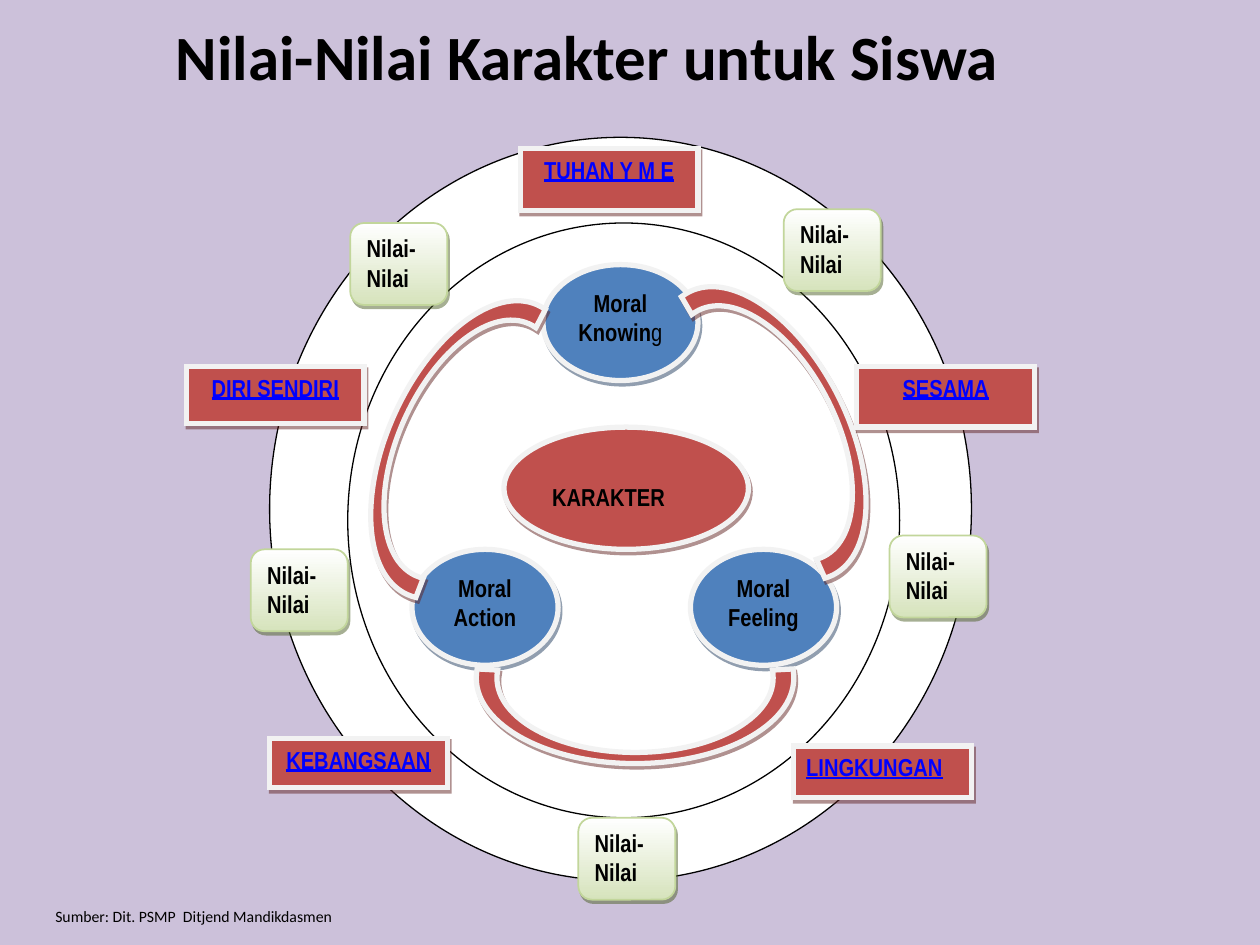
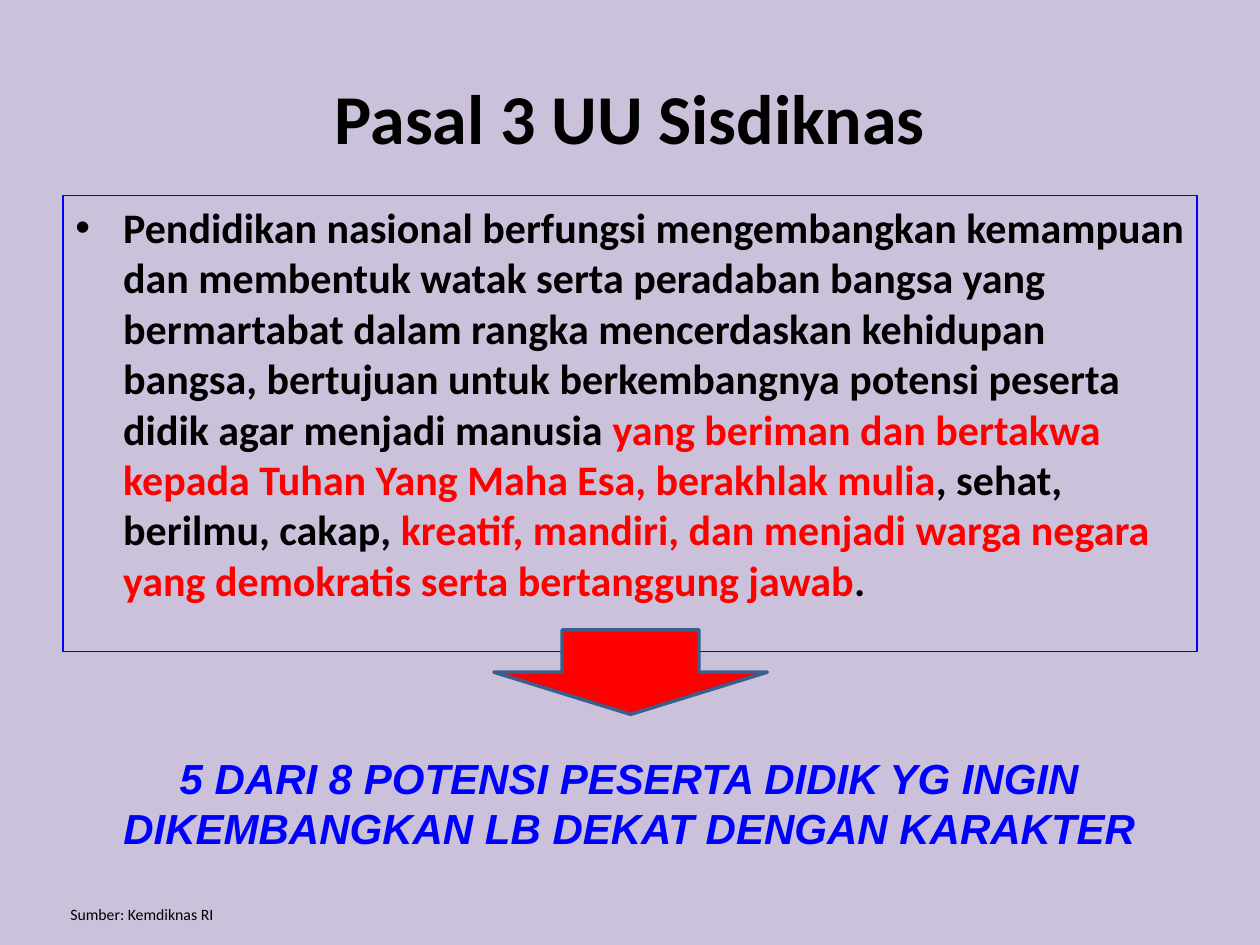
from math import cos, radians, sin, tan

from lxml import etree
from pptx import Presentation
from pptx.dml.color import RGBColor
from pptx.enum import shapes, text as text_enum
from pptx.oxml import ns
from pptx.util import Inches, Pt

LAVENDER = RGBColor(0xCC, 0xC1, 0xDA)
WHITE = RGBColor(0xFF, 0xFF, 0xFF)
BLACK = RGBColor(0, 0, 0)
RED = RGBColor(0xFF, 0, 0)
BLUE = RGBColor(0, 0, 0xFF)
BRICK = RGBColor(0xC0, 0x50, 0x4D)
BRICK_SHADOW = RGBColor(0x62, 0x24, 0x23)
STEEL = RGBColor(0x4F, 0x81, 0xBD)
STEEL_SHADOW = RGBColor(0x24, 0x3F, 0x60)
STEEL_LINE = RGBColor(0x3A, 0x5F, 0x8C)
PALE_GREY = RGBColor(0xF2, 0xF2, 0xF2)
GREEN = RGBColor(0xD6, 0xE3, 0xBC)
GREEN_LINE = RGBColor(0xC2, 0xD6, 0x9B)
GREEN_SHADOW = RGBColor(0x4E, 0x61, 0x28)

SHAPE = shapes.MSO_SHAPE
LEFT, CENTER = text_enum.PP_ALIGN.LEFT, text_enum.PP_ALIGN.CENTER
TOP, MIDDLE = text_enum.MSO_ANCHOR.TOP, text_enum.MSO_ANCHOR.MIDDLE
LABEL = dict(size=14, font="Arial Narrow", bold=True, space_after=10)

ARC_WIDTH, ARC_HEIGHT = 2.52, 1.36
ARC_INNER_RATIO = 0.87
ARC_ANGLES = (-6, 0, 90, 180, 186)  # slightly more than a half ellipse


def write(shape, content, size, font="Calibri", color=BLACK, bold=False, italic=False,
          underline=False, align=LEFT, anchor=TOP, wrap=True, side_margin=0.1,
          top_margin=0.05, space_before=0, space_after=0):
    """Write one paragraph; content is a string or a list of (text, overrides)."""
    frame = shape.text_frame
    frame.word_wrap = wrap
    frame.vertical_anchor = anchor
    frame.margin_left = frame.margin_right = Inches(side_margin)
    frame.margin_top = Inches(top_margin)
    paragraph = frame.paragraphs[0]
    paragraph.alignment = align
    paragraph.space_before = Pt(space_before)
    paragraph.space_after = Pt(space_after)
    runs = [(content, {})] if isinstance(content, str) else content
    for words, overrides in runs:
        run = paragraph.add_run()
        run.text = words
        run.font.name = font
        run.font.size = Pt(size)
        run.font.bold = overrides.get("bold", bold)
        run.font.italic = italic
        run.font.underline = underline
        run.font.color.rgb = overrides.get("color", color)
    return paragraph


def add_text(slide, box, content, **text_format):
    shape = slide.shapes.add_textbox(*map(Inches, box))
    write(shape, content, **text_format)


def add_bullet(paragraph, indent):
    properties = paragraph._p.get_or_add_pPr()
    properties.set("marL", str(Inches(indent)))
    properties.set("indent", str(-Inches(indent)))
    etree.SubElement(properties, ns.qn("a:buFont")).set("typeface", "Arial")
    etree.SubElement(properties, ns.qn("a:buChar")).set("char", "•")


def add_shadow(shape, shadow):
    """Give the shape an offset shadow and sharp outline corners."""
    properties = shape.element.spPr
    etree.SubElement(properties.find(ns.qn("a:ln")), ns.qn("a:miter"), lim="800000")
    outer = etree.SubElement(properties.find(ns.qn("a:effectLst")), ns.qn("a:outerShdw"),
                             dist=str(Pt(2.2)), dir=str(63 * 60000), algn="ctr",
                             rotWithShape="0")
    color = etree.SubElement(outer, ns.qn("a:srgbClr"), val=str(shadow))
    etree.SubElement(color, ns.qn("a:alpha"), val="50000")


def style(shape, fill, line, line_width, shadow=None):
    """Set fill (None for empty), outline and an optional shadow."""
    if fill is None:
        shape.fill.background()
    else:
        shape.fill.solid()
        shape.fill.fore_color.rgb = fill
    shape.line.color.rgb = line
    shape.line.width = Pt(line_width)
    shape.shadow.inherit = False
    if shadow is not None:
        add_shadow(shape, shadow)


def add_shape(slide, kind, box, fill, line, line_width, shadow=None):
    shape = slide.shapes.add_shape(kind, *map(Inches, box))
    style(shape, fill, line, line_width, shadow)
    return shape


def add_framed(slide, kind, box, content, fill, shadow, **text_format):
    """Add a labelled shape with the thick pale frame."""
    shape = add_shape(slide, kind, box, fill, PALE_GREY, 3, shadow)
    write(shape, content, **LABEL, **text_format)


def add_values_tile(slide, left, top):
    tile = add_shape(slide, SHAPE.ROUNDED_RECTANGLE, (left, top, 0.77, 0.65),
                     GREEN, GREEN_LINE, 1, GREEN_SHADOW)
    tile.fill.gradient()
    tile.fill.gradient_angle = 270
    for stop, color in zip(tile.fill.gradient_stops, (WHITE, GREEN)):
        stop.color.rgb = color
    write(tile, "Nilai-Nilai", **LABEL)


def ellipse_curves(angles, ratio):
    """Return the start point and the Bezier triples along a scaled ellipse."""
    def place(x, y):
        return (Inches(ARC_WIDTH / 2 * (1 + ratio * x)),
                Inches(ARC_HEIGHT / 2 * (1 - ratio * y)))

    turns = [radians(angle) for angle in angles]
    curves = []
    for start, end in zip(turns, turns[1:]):
        pull = 4 / 3 * tan((end - start) / 4)
        curves.append((
            place(cos(start) - pull * sin(start), sin(start) + pull * cos(start)),
            place(cos(end) + pull * sin(end), sin(end) - pull * cos(end)),
            place(cos(end), sin(end))))
    return place(cos(turns[0]), sin(turns[0])), curves


def add_path_step(outline, tag, points):
    step = etree.SubElement(outline, ns.qn(tag))
    for x, y in points:
        etree.SubElement(step, ns.qn("a:pt"), x=str(x), y=str(y))


def add_arc_band(slide, left, top, rotation):
    """Add a half-ellipse band in the frame of its whole ellipse."""
    right, bottom = left + ARC_WIDTH, top + ARC_HEIGHT
    builder = slide.shapes.build_freeform(Inches(left), Inches(top), scale=1.0)
    builder.add_line_segments([(Inches(x), Inches(y)) for x, y in
                               ((right, top), (right, bottom), (left, bottom))])
    band = builder.convert_to_shape()

    outline = next(band.element.iter(ns.qn("a:path")))
    for step in list(outline):
        outline.remove(step)
    edges = ((ARC_ANGLES, 1, "a:moveTo"), (ARC_ANGLES[::-1], ARC_INNER_RATIO, "a:lnTo"))
    for angles, ratio, first_step in edges:
        start, curves = ellipse_curves(angles, ratio)
        add_path_step(outline, first_step, [start])
        for curve in curves:
            add_path_step(outline, "a:cubicBezTo", curve)
    add_path_step(outline, "a:close", [])

    band.rotation = rotation
    style(band, BRICK, PALE_GREY, 3, BRICK_SHADOW)


def add_slide(presentation, title, title_box, title_size):
    slide = presentation.slides.add_slide(presentation.slide_layouts[6])
    slide.background.fill.solid()
    slide.background.fill.fore_color.rgb = LAVENDER
    add_text(slide, title_box, title, size=title_size, bold=True, align=CENTER, anchor=MIDDLE)
    return slide


def add_source(slide, box, source):
    add_text(slide, box, source, size=9, wrap=False)


def build_character_values(presentation):
    slide = add_slide(presentation, "Nilai-Nilai Karakter untuk Siswa",
                      (0.16, 0.13, 9, 0.62), 36)
    for ring in ((2.14, 1.09, 5.57, 5.9), (2.76, 1.77, 4.38, 4.72)):
        add_shape(slide, SHAPE.OVAL, ring, WHITE, BLACK, 0.75)

    add_framed(slide, SHAPE.OVAL, (4, 3.39, 1.94, 0.97), "KARAKTER", BRICK, BRICK_SHADOW,
               top_margin=0.29)
    knowing = [("Moral Knowin", {}), ("g", {"bold": False})]
    for box, label in (((4.31, 2.1, 1.23, 0.92), knowing),
                       ((5.48, 4.36, 1.16, 0.92), "Moral Feeling"),
                       ((3.27, 4.36, 1.16, 0.92), "Moral Action")):
        add_framed(slide, SHAPE.OVAL, box, label, STEEL, STEEL_SHADOW,
                   align=CENTER, side_margin=0.05)

    add_arc_band(slide, 4.78, 2.76, 63)
    for left, top, height, label, align in (
            (4.13, 1.18, 0.49, "TUHAN Y M E", CENTER),
            (6.8, 2.91, 0.48, "SESAMA", CENTER),
            (1.48, 2.91, 0.45, "DIRI SENDIRI", CENTER),
            (6.3, 5.92, 0.41, "LINGKUNGAN", LEFT),
            (2.14, 5.86, 0.39, "KEBANGSAAN", CENTER)):
        add_framed(slide, SHAPE.RECTANGLE, (left, top, 1.41, height), label, BRICK,
                   BRICK_SHADOW, color=BLUE, underline=True, align=align)
    for left, top in ((6.22, 1.66), (7.06, 4.25), (4.59, 6.49), (2.78, 1.77), (1.99, 4.36)):
        add_values_tile(slide, left, top)
    add_arc_band(slide, 3.78, 4.7, 180)
    add_arc_band(slide, 2.49, 2.89, 294.2)
    add_source(slide, (0.34, 7.15, 2.42, 0.25), "Sumber: Dit. PSMP  Ditjend Mandikdasmen")


def build_article(presentation):
    slide = add_slide(presentation, "Pasal 3 UU Sisdiknas", (0.5, 0.3, 9, 1.25), 40)
    red = {"color": RED}
    article = [
        ("Pendidikan nasional berfungsi mengembangkan kemampuan dan membentuk watak serta "
         "peradaban bangsa yang bermartabat dalam rangka mencerdaskan kehidupan bangsa, "
         "bertujuan untuk berkembangnya potensi peserta didik agar menjadi manusia ", {}),
        ("yang beriman dan bertakwa kepada Tuhan Yang Maha Esa, berakhlak mulia", red),
        (", sehat, berilmu, cakap, ", {}),
        ("kreatif, mandiri, dan menjadi warga negara yang demokratis serta "
         "bertanggung jawab", red),
        (".", {}),
    ]
    panel = add_shape(slide, SHAPE.RECTANGLE, (0.5, 1.55, 9, 3.62), None, BLUE, 0.75)
    paragraph = write(panel, article, size=24, bold=True, space_before=5)
    add_bullet(paragraph, 0.38)
    add_text(slide, (0.58, 5.92, 8.83, 0.91),
             "5 DARI 8 POTENSI PESERTA DIDIK YG INGIN DIKEMBANGKAN LB DEKAT DENGAN KARAKTER",
             size=24, font="Arial", color=BLUE, bold=True, italic=True, align=CENTER)
    add_shape(slide, SHAPE.DOWN_ARROW, (3.92, 5, 2.17, 0.67), RED, STEEL_LINE, 2)
    add_source(slide, (0.46, 7.13, 1.35, 0.25), "Sumber: Kemdiknas RI")


def main():
    presentation = Presentation()
    presentation.slide_width = Inches(10)
    presentation.slide_height = Inches(7.5)
    build_character_values(presentation)
    build_article(presentation)
    presentation.save("out.pptx")


if __name__ == "__main__":
    main()
